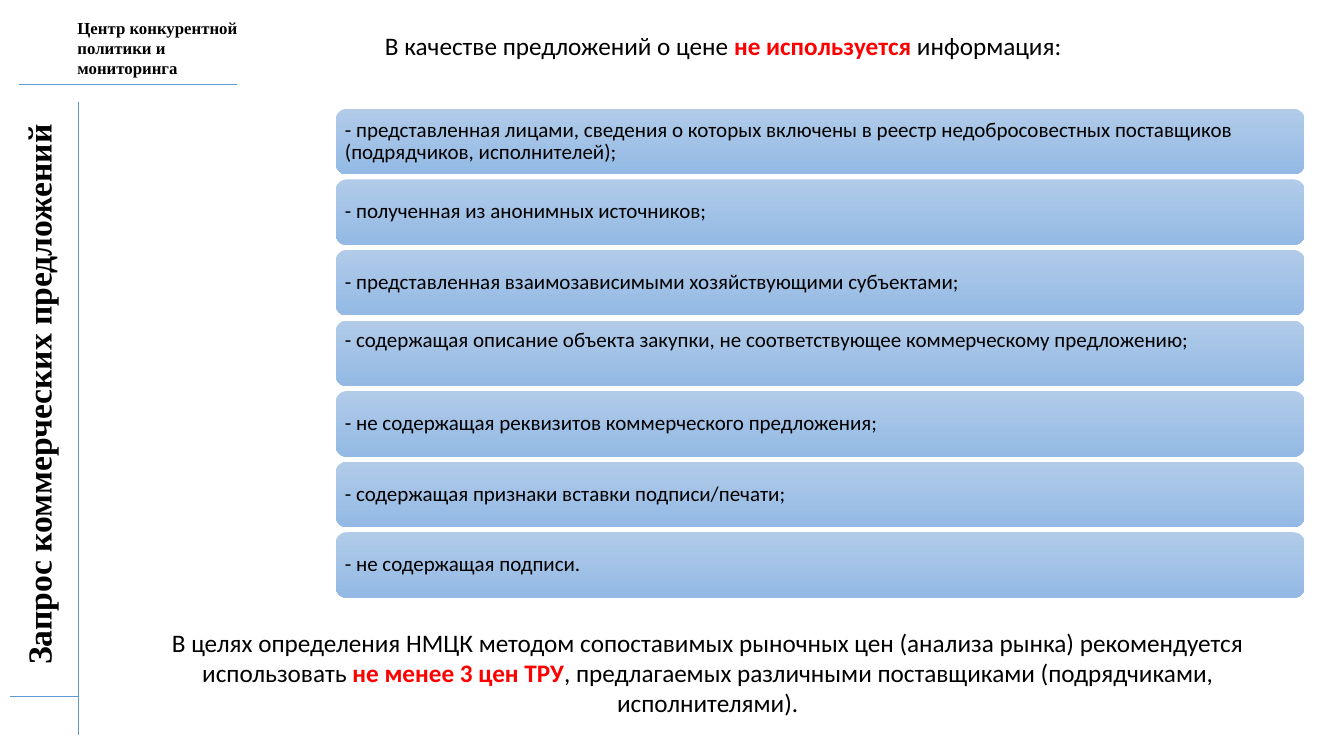
from pptx import Presentation
from pptx import util as u
from pptx.dml.color import RGBColor
from pptx.enum import shapes, text
from pptx.oxml.ns import qn
from lxml import etree

BLACK, RED, BLUE = "000000", "FF0000", "5B9BD5"


def color(value):
    return RGBColor.from_string(value)


def add_runs(p, runs, **font):
    """Append (text, colour, bold) runs that share one font format."""
    for words, hue, bold in runs:
        r = p.add_run()
        r.text = words
        for key, value in {**font, "bold": bold}.items():
            setattr(r.font, key, value)
        r.font.color.rgb = color(hue)


prs = Presentation()
prs.slide_width, prs.slide_height = u.Inches(13.33), u.Inches(7.5)
s = prs.slides.add_slide(prs.slide_layouts[6])

# Frame lines
for x1, y1, x2, y2 in [(0.19, 0.84, 2.35, 0.84),
                       (0.78, 1.01, 0.78, 7.29),
                       (0.1, 6.91, 0.77, 6.91)]:
    sp = s.shapes.add_connector(shapes.MSO_CONNECTOR.STRAIGHT,
                                *map(u.Inches, (x1, y1, x2, y2)))
    sp.line.color.rgb = color(BLUE)
    sp.line.width = u.Pt(0.5)
    etree.SubElement(sp._element.spPr, qn("a:effectLst"))

# Text boxes: position, direction, alignment, anchor, font, size, paragraphs of runs
LEFT, CENTER = text.PP_ALIGN.LEFT, text.PP_ALIGN.CENTER
TOP, MIDDLE = text.MSO_ANCHOR.TOP, text.MSO_ANCHOR.MIDDLE
boxes = [
    ((0.67, 0.11, 2.07, 0.73), "horz", LEFT, MIDDLE, "Times New Roman", 12, [
        [("Центр конкурентной", BLACK, True)],
        [("политики и мониторинга", BLACK, True)]]),
    ((0.13, 1.08, 0.61, 5.6), "vert270", CENTER, TOP, "Times New Roman", 24, [
        [("Запрос коммерческих предложений", BLACK, True)]]),
    ((3.72, 0.25, 7.47, 0.71), "horz", LEFT, TOP, "Calibri", 18, [
        [("В качестве предложений о цене ", BLACK, False),
         ("не используется ", RED, True),
         ("информация:", BLACK, False)]]),
    ((1.1, 6.17, 11.84, 1.01), "horz", CENTER, TOP, "Calibri", 18, [
        [("В целях определения НМЦК методом сопоставимых рыночных цен "
          "(анализа рынка) рекомендуется использовать ", BLACK, False),
         ("не менее 3 цен ТРУ", RED, True),
         (", предлагаемых различными поставщиками (подрядчиками, "
          "исполнителями).", BLACK, False)]]),
]
for place, direction, align, anchor, font, size, paragraphs in boxes:
    sp = s.shapes.add_textbox(*map(u.Inches, place))
    tf = sp.text_frame
    tf.word_wrap = True
    tf.vertical_anchor = anchor
    if direction == "vert270":
        tf._txBody.bodyPr.set("vert", direction)
        tf.margin_top, tf.margin_bottom = u.Inches(0.07), u.Inches(0)
    for i, runs in enumerate(paragraphs):
        p = tf.add_paragraph() if i else tf.paragraphs[0]
        p.alignment = align
        add_runs(p, runs, name=font, size=u.Pt(size))

# Bars with the excluded kinds of information
bars = [
    ("- представленная лицами, сведения о которых включены в реестр "
     "недобросовестных поставщиков (подрядчиков, исполнителей);", MIDDLE),
    ("- полученная из анонимных источников;", MIDDLE),
    ("- представленная взаимозависимыми хозяйствующими субъектами;", MIDDLE),
    ("- содержащая описание объекта закупки, не соответствующее "
     "коммерческому предложению;", TOP),
    ("- не содержащая реквизитов коммерческого предложения;", MIDDLE),
    ("- содержащая признаки вставки подписи/печати;", MIDDLE),
    ("- не содержащая подписи.", MIDDLE),
]
for i, (words, anchor) in enumerate(bars):
    sp = s.shapes.add_shape(shapes.MSO_SHAPE.ROUNDED_RECTANGLE, u.Inches(3.33),
                            u.Inches(1.08 + 0.7 * i), u.Inches(9.61), u.Inches(0.65))
    sp.shadow.inherit = False
    sp.line.fill.background()
    sp.fill.gradient()
    sp.fill.gradient_angle = 270
    for stop, hue in zip(sp.fill.gradient_stops, ("B1CBE9", "93B9E4")):
        stop.color.rgb = color(hue)
    tf = sp.text_frame
    for side in ("left", "top", "right", "bottom"):
        setattr(tf, f"margin_{side}", u.Inches(0.06))
    tf.word_wrap = True
    tf.vertical_anchor = anchor
    p = tf.paragraphs[0]
    p.alignment, p.line_spacing = LEFT, 0.9
    add_runs(p, [(words, BLACK, False)], name="Calibri", size=u.Pt(15))

prs.save("out.pptx")
